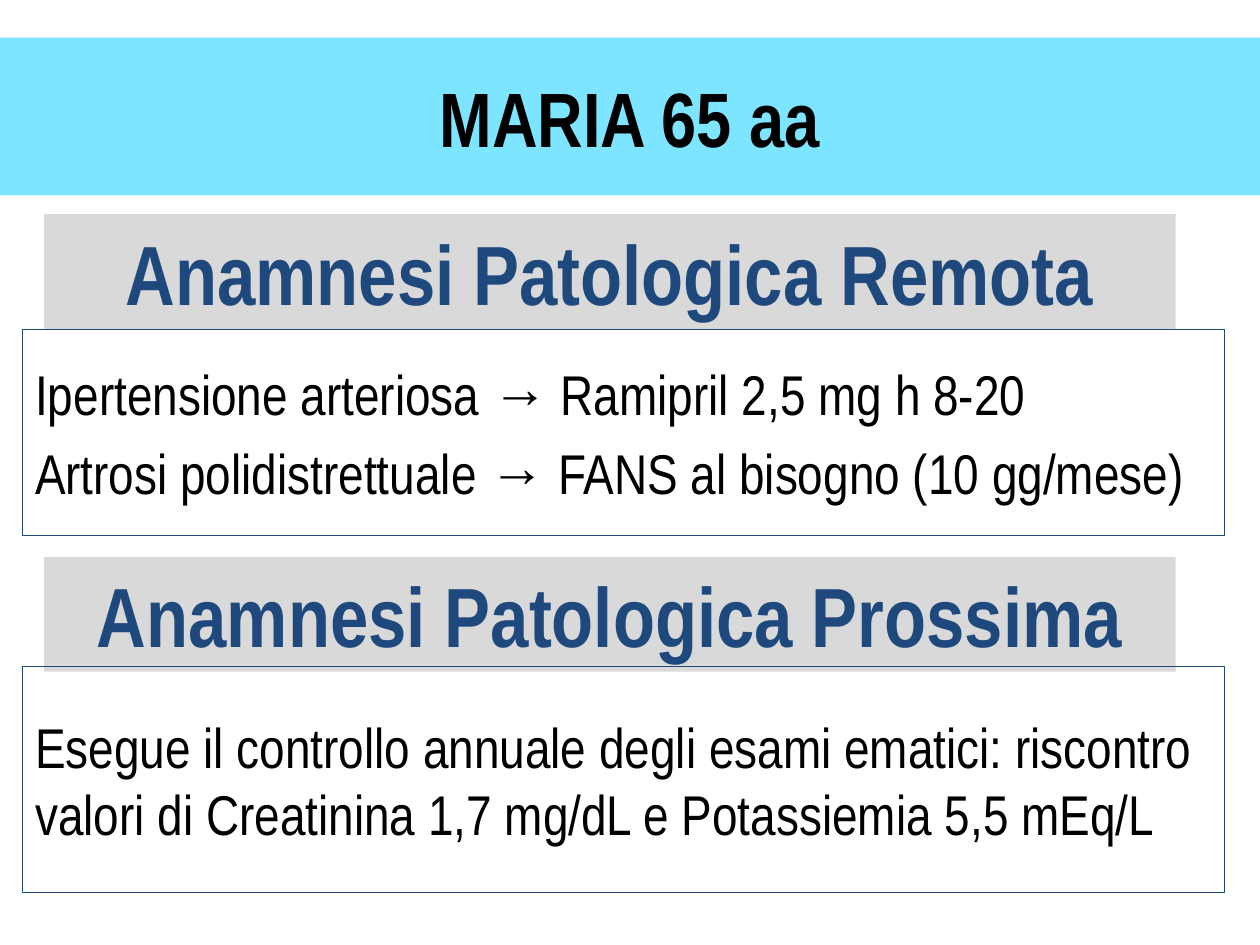
import lxml.etree
import pptx
import pptx.dml.color
import pptx.enum.shapes
import pptx.enum.text
import pptx.oxml.ns
import pptx.util
from pptx.util import Cm

FONT = "Arial Narrow"
NAVY = "1F497D"
LEFT = pptx.enum.text.PP_ALIGN.LEFT
CENTER = pptx.enum.text.PP_ALIGN.CENTER


def rgb(hex_color):
    return pptx.dml.color.RGBColor.from_string(hex_color)


def fill_shape(sp, color, alpha=None):
    """Fill with a solid colour; alpha is the opacity in percent."""
    sp.fill.solid()
    sp.fill.fore_color.rgb = rgb(color)
    if alpha is not None:
        clr = sp.fill._xPr.find(".//" + pptx.oxml.ns.qn("a:srgbClr"))
        el = lxml.etree.SubElement(clr, pptx.oxml.ns.qn("a:alpha"))
        el.set("val", str(alpha * 1000))


def write_text(sp, text, size, color="000000", bold=False, align=CENTER, before=0):
    tf = sp.text_frame
    tf.text = text
    tf.word_wrap = True
    tf.auto_size = pptx.enum.text.MSO_AUTO_SIZE.NONE
    tf.vertical_anchor = pptx.enum.text.MSO_ANCHOR.MIDDLE
    for p in tf.paragraphs:
        p.alignment = align
        p.space_before = pptx.util.Pt(before)
        for r in p.runs:
            r.font.name = FONT
            r.font.size = pptx.util.Pt(size)
            r.font.bold = bold
            r.font.color.rgb = rgb(color)


def add_title(s, text):
    sp = s.shapes.title
    sp.left, sp.top, sp.width, sp.height = Cm(0), Cm(0.76), Cm(25.4), Cm(3.18)
    fill_shape(sp, "00CCFF", alpha=51)
    write_text(sp, text, 44, bold=True)


def add_rectangle(s, left, top, width, height):
    sp = s.shapes.add_shape(
        pptx.enum.shapes.MSO_SHAPE.RECTANGLE, Cm(left), Cm(top), Cm(width), Cm(height))
    sp.shadow.inherit = False
    return sp


def add_heading(s, top, text):
    sp = add_rectangle(s, 0.89, top, 22.81, 2.31)
    fill_shape(sp, "D9D9D9")
    sp.line.fill.background()
    write_text(sp, text, 48, NAVY, bold=True)


def add_framed_text(s, top, height, text):
    sp = add_rectangle(s, 0.46, top, 24.22, height)
    sp.fill.background()
    sp.line.color.rgb = rgb(NAVY)
    sp.line.width = pptx.util.Pt(0.75)
    write_text(sp, text, 32, align=LEFT, before=6.4)


def main():
    prs = pptx.Presentation()
    prs.slide_width, prs.slide_height = Cm(25.4), Cm(19.05)
    s = prs.slides.add_slide(prs.slide_layouts.get_by_name("Title Only"))
    add_title(s, "MARIA 65 aa")
    add_heading(s, 4.32, "Anamnesi Patologica Remota")
    add_framed_text(s, 6.65, 4.14,
                    "Ipertensione arteriosa → Ramipril 2,5 mg h 8-20\n"
                    "Artrosi polidistrettuale → FANS al bisogno (10 gg/mese)")
    add_heading(s, 11.23, "Anamnesi Patologica Prossima")
    add_framed_text(s, 13.44, 4.55,
                    "Esegue il controllo annuale degli esami ematici: riscontro "
                    "valori di Creatinina 1,7 mg/dL e Potassiemia 5,5 mEq/L")
    prs.save("out.pptx")


if __name__ == "__main__":
    main()
